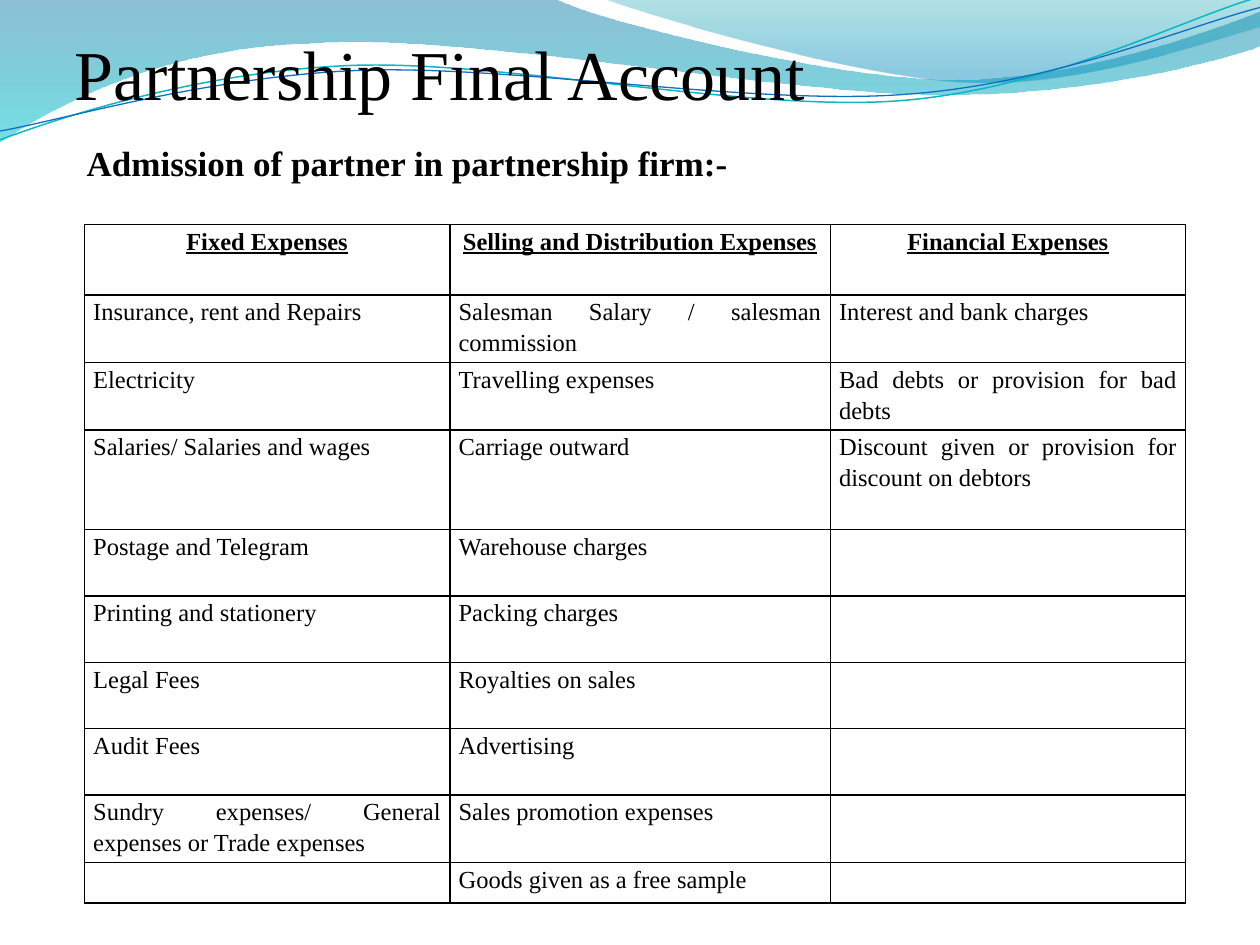
from math import cos, radians, sin

from lxml import etree
from pptx import Presentation
from pptx.dml.color import RGBColor
from pptx.enum.text import MSO_ANCHOR, PP_ALIGN
from pptx.oxml.ns import qn
from pptx.util import Inches, Pt

LEFT, CENTER, JUSTIFY = PP_ALIGN.LEFT, PP_ALIGN.CENTER, PP_ALIGN.JUSTIFY
TOP, BOTTOM = MSO_ANCHOR.TOP, MSO_ANCHOR.BOTTOM
TITLE_ONLY = 5

UPPER_WAVE = [
    [(0, 0)], [(4.4, -0.01)],
    [(4.76, 0.17), (6.64, 0.63), (7.58, 0.63)],
    [(8.53, 0.63), (9.58, 0.26), (10, 0.09)],
    [(10.01, 0.36)],
    [(9.83, 0.44), (8.7, 0.76), (7.46, 0.75)],
    [(6.22, 0.75), (3.82, 0.28), (2.57, 0.34)],
    [(1.29, 0.36), (0.46, 0.83), (-0.01, 1.13)],
]
RIGHT_WAVE = [
    [(4.79, -0.01)],
    [(5.09, 0.11), (6.82, 0.62), (7.69, 0.65)],
    [(8.56, 0.69), (9.61, 0.32), (10, 0.21)],
    [(10, 0)],
]
TEAL_LINE = [
    [(0, 1.11)],
    [(0.48, 0.93), (1.58, 0.57), (2.77, 0.52)],
    [(3.95, 0.47), (5.93, 0.89), (7.13, 0.8)],
    [(8.33, 0.71), (9.38, 0.15), (9.98, -0.02)],
]
BLUE_LINE = [
    [(0, 1.04)],
    [(0.47, 0.96), (1.64, 0.61), (2.83, 0.56)],
    [(4.03, 0.51), (5.97, 0.84), (7.17, 0.75)],
    [(8.36, 0.67), (9.41, 0.21), (10, 0.06)],
]
EXPENSES = [
    ("Fixed Expenses", "Selling and Distribution Expenses", "Financial Expenses"),
    ("Insurance, rent and Repairs", "Salesman Salary / salesman commission",
     "Interest and bank charges"),
    ("Electricity", "Travelling expenses", "Bad debts or provision for bad debts"),
    ("Salaries/ Salaries and wages", "Carriage outward",
     "Discount given or provision for discount on debtors"),
    ("Postage and Telegram", "Warehouse charges", ""),
    ("Printing and stationery", "Packing charges", ""),
    ("Legal Fees", "Royalties on sales", ""),
    ("Audit Fees", "Advertising", ""),
    ("Sundry expenses/ General expenses or Trade expenses",
     "Sales promotion expenses", ""),
    ("", "Goods given as a free sample", ""),
]
COLUMN_WIDTHS = [2.9, 3.02, 2.82]
TABLE_HEIGHT, HEADER, TALL, LAST = 5.36, 0.56, 0.79, 0.32
REGULAR = (TABLE_HEIGHT - HEADER - TALL - LAST) / 7
ROW_HEIGHTS = [HEADER, REGULAR, REGULAR, TALL] + [REGULAR] * 5 + [LAST]


def color(hex_string):
    """Return the colour for a hex string."""
    return RGBColor.from_string(hex_string)


def write(frame, text, size=14, bold=False, underline=False, align=LEFT,
          spacing=None, before=0, font="Times New Roman", ink="000000"):
    """Put one formatted paragraph into a text frame."""
    paragraph = frame.paragraphs[0]
    paragraph.alignment = align
    paragraph.line_spacing = spacing
    paragraph.space_before = Pt(before)
    run = paragraph.add_run()
    run.text = text
    run.font.name = font
    run.font.size = Pt(size)
    run.font.bold = bold
    run.font.underline = underline
    run.font.color.rgb = color(ink)


def rotate(segments, center, degrees):
    """Turn all points of the segments clockwise about a center."""
    cosine, sine = cos(radians(degrees)), sin(radians(degrees))
    left, top = center
    return [[(left + cosine * (x - left) - sine * (y - top),
              top + sine * (x - left) + cosine * (y - top)) for x, y in segment]
            for segment in segments]


class Deck:
    """Holds the style and the current slide, on a grid ten columns wide."""

    def __init__(self, width=10, height=7.5, columns=10):
        """Start a presentation with one title-only slide."""
        self.presentation = Presentation()
        self.presentation.slide_width = Inches(width)
        self.presentation.slide_height = Inches(height)
        self.unit = Inches(width) / columns
        self.slide = self.presentation.slides.add_slide(
            self.presentation.slide_layouts[TITLE_ONLY])

    def grid(self, *lengths):
        """Convert grid lengths to slide units."""
        return [round(length * self.unit) for length in lengths]

    def outline(self, segments, close):
        """Add a freeform whose three-point segments are cubic curves."""
        points = [self.grid(*point) for segment in segments for point in segment]
        builder = self.slide.shapes.build_freeform(*points[0])
        builder.add_line_segments(points[1:], close=close)
        shape = builder.convert_to_shape()
        shape.shadow.inherit = False
        lines = iter(list(shape.element.iter(qn("a:lnTo"))))
        for segment in segments[1:]:
            steps = [next(lines) for _ in segment]
            if len(steps) == 3:
                curve = etree.Element(qn("a:cubicBezTo"))
                steps[0].addprevious(curve)
                for step in steps:
                    curve.append(step[0])
                    step.getparent().remove(step)
        return shape

    def wave(self, segments, stops):
        """Add a wave with a translucent gradient running downwards."""
        shape = self.outline(segments, True)
        shape.line.fill.background()
        shape.fill.gradient()
        shape.fill.gradient_angle = 270
        for stop, (position, hex_string, _) in zip(shape.fill.gradient_stops, stops):
            stop.position = position
            stop.color.rgb = color(hex_string)
        for node, stop in zip(shape.element.spPr.iter(qn("a:srgbClr")), stops):
            etree.SubElement(node, qn("a:alpha"), val=str(stop[2] * 1000))

    def curve(self, segments, center, hex_string, width, tilt=2.7):
        """Add an open curved line, tilted by the shape's rotation."""
        shape = self.outline(rotate(segments, center, tilt), False)
        shape.rotation = 360 - tilt
        shape.fill.background()
        shape.line.color.rgb = color(hex_string)
        shape.line.width = Pt(width)

    def title(self, text, area, **text_format):
        """Place the title in front of the waves."""
        shape = self.slide.shapes.title
        shape.element.getparent().append(shape.element)
        shape.left, shape.top, shape.width, shape.height = self.grid(*area)
        frame = shape.text_frame
        frame.margin_left = frame.margin_right = frame.margin_bottom = 0
        frame.vertical_anchor = BOTTOM
        write(frame, text, **text_format)

    def text(self, text, area, **text_format):
        """Add a wrapped text box."""
        frame = self.slide.shapes.add_textbox(*self.grid(*area)).text_frame
        frame.word_wrap = True
        write(frame, text, **text_format)

    def border(self, cell, hex_string="000000", width=1):
        """Draw all four borders of a cell."""
        properties = cell._tc.get_or_add_tcPr()
        for index, side in enumerate(("lnL", "lnR", "lnT", "lnB")):
            line = etree.Element(qn("a:" + side), w=str(Pt(width)))
            fill = etree.SubElement(line, qn("a:solidFill"))
            etree.SubElement(fill, qn("a:srgbClr"), val=hex_string)
            properties.insert(index, line)

    def table(self, rows, left, top, widths, heights):
        """Add a bordered table with an underlined header row."""
        area = self.grid(left, top, sum(widths), sum(heights))
        table = self.slide.shapes.add_table(len(rows), len(widths), *area).table
        table.first_row = table.horz_banding = False
        for column, width in zip(table.columns, self.grid(*widths)):
            column.width = width
        for row, height in zip(table.rows, self.grid(*heights)):
            row.height = height
        for cell, text in zip(table.iter_cells(), sum(rows, ())):
            header = text in rows[0]
            cell.margin_left, cell.margin_right = self.grid(0.07, 0.07)
            cell.margin_top = cell.margin_bottom = 0
            cell.vertical_anchor = TOP
            cell.fill.background()
            self.border(cell)
            if text:
                write(cell.text_frame, text, bold=header, underline=header,
                      align=CENTER if header else JUSTIFY, spacing=1.15)


def main():
    """Build and save the slide."""
    deck = Deck()
    deck.wave(UPPER_WAVE, [(0, "0074A1", 45), (1, "00C6CF", 55)])
    deck.wave(RIGHT_WAVE, [(0, "00A1A9", 30), (0.8, "008BBF", 45)])
    deck.curve(TEAL_LINE, (4.99, 0.58), "0AB8BF", 0.85)
    deck.curve(BLUE_LINE, (5, 0.59), "0F6FC6", 0.75)
    deck.title("Partnership Final Account", (0.59, -0.34, 9, 1.25), size=40)
    deck.text("Admission of partner in partnership firm:-", (0.59, 1.07, 9, 6.06),
              size=20, bold=True, align=JUSTIFY, before=4)
    deck.table(EXPENSES, 0.67, 1.78, COLUMN_WIDTHS, ROW_HEIGHTS)
    deck.presentation.save("out.pptx")


if __name__ == "__main__":
    main()
